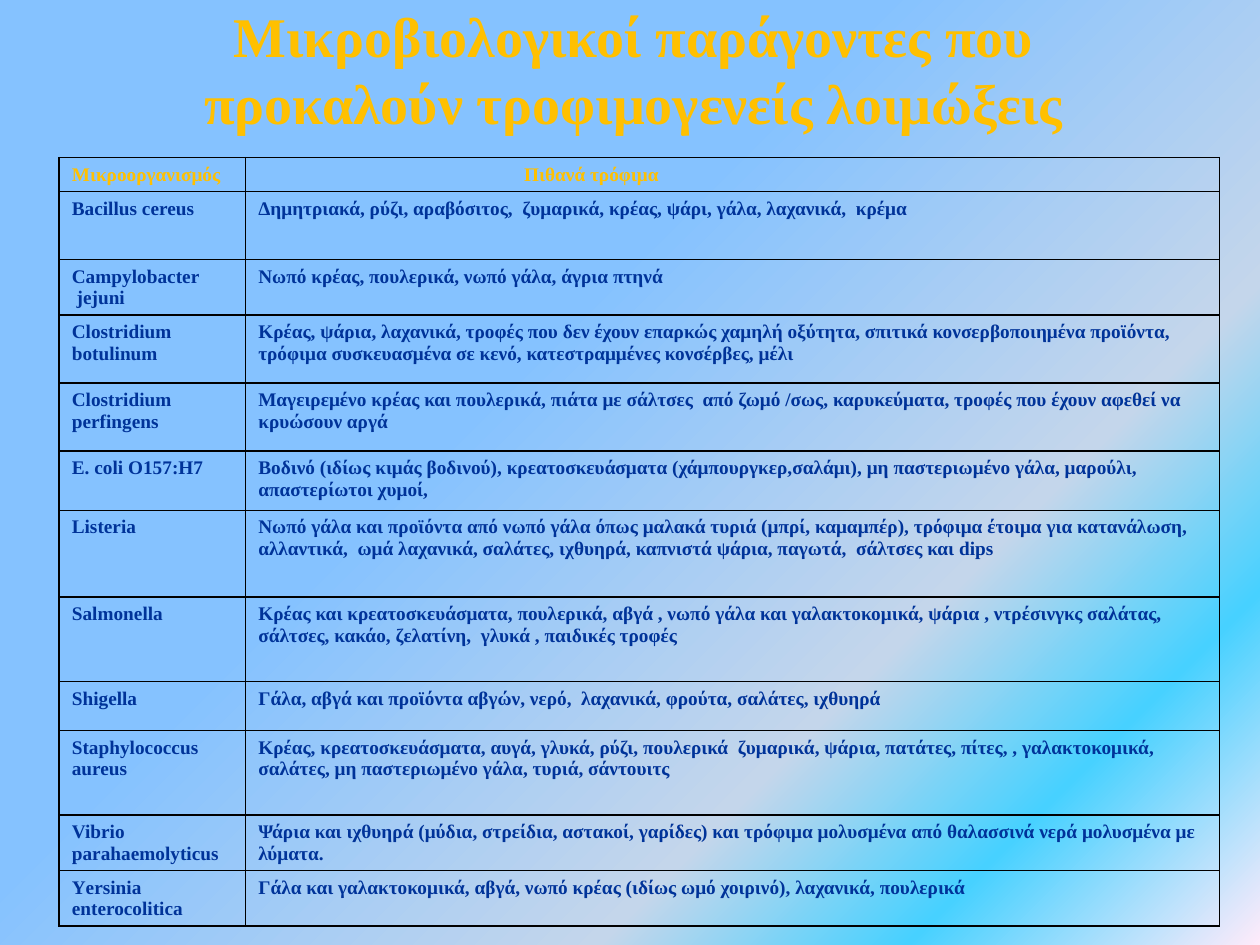
from dataclasses import dataclass

from lxml.etree import SubElement
from pptx import Presentation
from pptx.dml.color import RGBColor as Color
from pptx.enum.text import MSO_ANCHOR as Anchor, MSO_AUTO_SIZE as AutoSize, PP_ALIGN as Align
from pptx.oxml import parse_xml
from pptx.oxml.ns import nsdecls, qn
from pptx.util import Inches, Pt


@dataclass(frozen=True)
class Theme:
    font: str = "Times New Roman"
    accent: str = "FFC000"
    body: str = "003399"
    border: str = "000000"
    title_size: int = 32
    table_size: int = 11
    border_width: int = 1
    gradient: tuple = ((40, "85C2FF"), (70, "C4D6EB"), (84, "47D1FF"), (100, "FFEBFA"))
    gradient_angle: int = 45


THEME = Theme()
TITLE = "Μικροβιολογικοί παράγοντες που προκαλούν τροφιμογενείς λοιμώξεις"
COLUMNS = (1.48, 7.73)
FOODS_HEADING_INDENT = 2.21

# Row height, microorganism, likely foods ("\n" new paragraph, "\v" line break)
ROWS = (
    (0.23, "Μικροοργανισμός", "Πιθανά τρόφιμα"),
    (0.54, "Bacillus cereus",
     "Δημητριακά, ρύζι, αραβόσιτος,  ζυμαρικά, κρέας, ψάρι, γάλα, λαχανικά,  κρέμα"),
    (0.39, "Campylobacter\n jejuni", "Νωπό κρέας, πουλερικά, νωπό γάλα, άγρια πτηνά"),
    (0.54, "Clostridium \vbotulinum",
     "Κρέας, ψάρια, λαχανικά, τροφές που δεν έχουν επαρκώς χαμηλή οξύτητα, σπιτικά "
     "κονσερβοποιημένα προϊόντα, τρόφιμα συσκευασμένα σε κενό, κατεστραμμένες κονσέρβες, μέλι"),
    (0.54, "Clostridium \vperfingens",
     "Μαγειρεμένο κρέας και πουλερικά, πιάτα με σάλτσες  από ζωμό /σως, καρυκεύματα, "
     "τροφές που έχουν αφεθεί να κρυώσουν αργά"),
    (0.47, "E. coli O157:H7",
     "Βοδινό (ιδίως κιμάς βοδινού), κρεατοσκευάσματα (χάμπουργκερ,σαλάμι), "
     "μη παστεριωμένο γάλα, μαρούλι, απαστερίωτοι χυμοί,"),
    (0.69, "Listeria",
     "Νωπό γάλα και προϊόντα από νωπό γάλα όπως μαλακά τυριά (μπρί, καμαμπέρ), τρόφιμα "
     "έτοιμα για κατανάλωση,  αλλαντικά,  ωμά λαχανικά, σαλάτες, ιχθυηρά, καπνιστά ψάρια, "
     "παγωτά,  σάλτσες και dips"),
    (0.67, "Salmonella",
     "Κρέας και κρεατοσκευάσματα, πουλερικά, αβγά , νωπό γάλα και γαλακτοκομικά, ψάρια , "
     "ντρέσινγκς σαλάτας, σάλτσες, κακάο, ζελατίνη,  γλυκά , παιδικές τροφές"),
    (0.39, "Shigella",
     "Γάλα, αβγά και προϊόντα αβγών, νερό,  λαχανικά, φρούτα, σαλάτες, ιχθυηρά"),
    (0.67, "Staphylococcus\naureus",
     "Κρέας, κρεατοσκευάσματα, αυγά, γλυκά, ρύζι, πουλερικά  ζυμαρικά, ψάρια, πατάτες, "
     "πίτες, , γαλακτοκομικά, σαλάτες, μη παστεριωμένο γάλα, τυριά, σάντουιτς"),
    (0.39, "Vibrio\nparahaemolyticus",
     "Ψάρια και ιχθυηρά (μύδια, στρείδια, αστακοί, γαρίδες) και τρόφιμα μολυσμένα από "
     "θαλασσινά νερά μολυσμένα με λύματα."),
    (0.39, "Υersinia\nenterocolitica",
     "Γάλα και γαλακτοκομικά, αβγά, νωπό κρέας (ιδίως ωμό χοιρινό), λαχανικά, πουλερικά"),
)


def set_text(text_frame, text, size, color):
    text_frame.text = text
    for paragraph in text_frame.paragraphs:
        for run in paragraph.runs:
            font = run.font
            font.name, font.size, font.bold = THEME.font, Pt(size), True
            font.color.rgb = Color.from_string(color)


def set_background(slide):
    stops = "".join(
        f'<a:gs pos="{share * 1000}"><a:srgbClr val="{color}"/></a:gs>'
        for share, color in THEME.gradient)
    background = parse_xml(
        f'<p:bg {nsdecls("p", "a")}><p:bgPr><a:gradFill rotWithShape="1">'
        f'<a:gsLst>{stops}</a:gsLst><a:lin ang="{THEME.gradient_angle * 60000}" scaled="1"/>'
        '</a:gradFill><a:effectLst/></p:bgPr></p:bg>')
    slide.element.cSld.insert(0, background)


def add_title(slide):
    title = slide.shapes.title
    title.left, title.top, title.width, title.height = map(Inches, (0.78, 0, 8.5, 1.09))
    set_text(title.text_frame, TITLE, THEME.title_size, THEME.accent)
    title.text_frame.auto_size = AutoSize.NONE
    title.text_frame.vertical_anchor = Anchor.MIDDLE
    title.text_frame.paragraphs[0].alignment = Align.CENTER


def set_borders(cell):
    properties = cell._tc.get_or_add_tcPr()
    for side in ("lnL", "lnR", "lnT", "lnB"):
        line = SubElement(properties, qn(f"a:{side}"), w=str(Pt(THEME.border_width)))
        fill = SubElement(line, qn("a:solidFill"))
        SubElement(fill, qn("a:srgbClr"), val=THEME.border)


def add_table(slide):
    heights = [height for height, *_ in ROWS]
    frame = slide.shapes.add_table(
        len(ROWS), len(COLUMNS), Inches(0.47), Inches(1.25),
        Inches(sum(COLUMNS)), Inches(sum(heights)))
    table = frame.table
    table.first_row = table.horz_banding = False
    for column, width in zip(table.columns, COLUMNS):
        column.width = Inches(width)
    for index, (row, (height, *texts)) in enumerate(zip(table.rows, ROWS)):
        row.height = Inches(height)
        color = THEME.body if index else THEME.accent
        for cell, text in zip(row.cells, texts):
            set_text(cell.text_frame, text, THEME.table_size, color)
            set_borders(cell)
            cell.fill.background()
    table.cell(0, 1).margin_left = Inches(FOODS_HEADING_INDENT)


def main():
    presentation = Presentation()
    presentation.slide_width, presentation.slide_height = Inches(10), Inches(7.5)
    slide = presentation.slides.add_slide(presentation.slide_layouts.get_by_name("Title Only"))
    set_background(slide)
    add_title(slide)
    add_table(slide)
    presentation.save("out.pptx")


if __name__ == "__main__":
    main()
